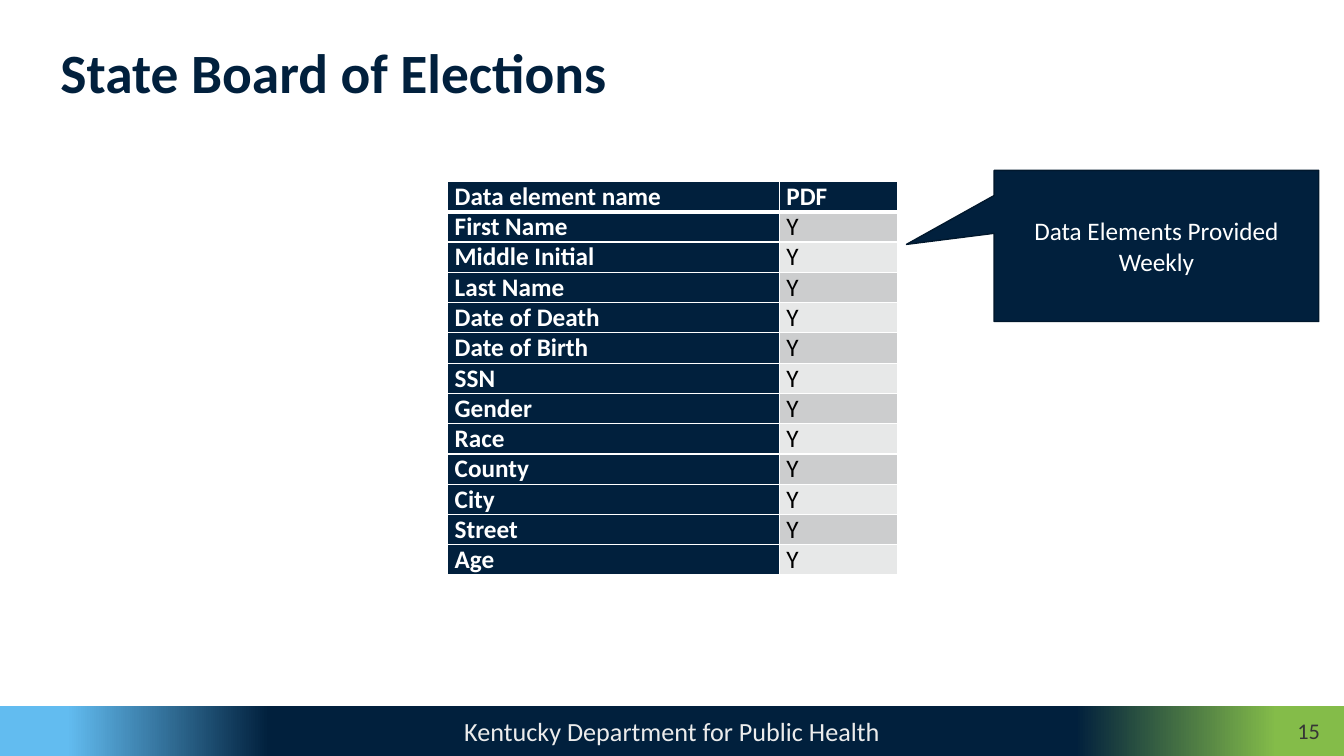
from dataclasses import dataclass

from lxml.etree import SubElement
from pptx import Presentation
from pptx.dml.color import RGBColor
from pptx.enum.shapes import MSO_SHAPE
from pptx.enum.text import MSO_ANCHOR, MSO_AUTO_SIZE, PP_ALIGN
from pptx.oxml.ns import qn
from pptx.util import Inches, Pt


@dataclass(frozen=True)
class Theme:
    font: str = "Calibri"
    navy: str = "01203D"
    outline: str = "01182D"
    sky: str = "62BCF0"
    green: str = "84BC49"
    white: str = "FFFFFF"
    black: str = "000000"
    footer_text: str = "ECECEC"
    number_text: str = "363636"
    bands: tuple = ("CCCDCE", "E7E8E8")
    title_size: float = 39.6
    text_size: float = 18
    footer_size: float = 18.7
    number_size: float = 16
    rule: float = 1
    header_rule: float = 3


def inches(*lengths):
    return [Inches(length) for length in lengths]


class SlideBuilder:
    def __init__(self, slide, theme):
        self.slide = slide
        self.theme = theme

    def fill_text(self, frame, text, size, color, bold=False, align=PP_ALIGN.LEFT,
                  **frame_format):
        formats = {"word_wrap": True, "vertical_anchor": MSO_ANCHOR.MIDDLE}
        for name, value in (formats | frame_format).items():
            setattr(frame, name, value)
        para = frame.paragraphs[0]
        para.alignment = align
        span = para.add_run()
        span.text = text
        font_format = {"name": self.theme.font, "size": Pt(size), "bold": bold}
        for name, value in font_format.items():
            setattr(span.font, name, value)
        span.font.color.rgb = RGBColor.from_string(color)
        return para

    def title(self, text, at):
        title = self.slide.shapes.title
        title.left, title.top, title.width, title.height = inches(*at)
        para = self.fill_text(title.text_frame, text, self.theme.title_size,
                              self.theme.navy, bold=True,
                              vertical_anchor=MSO_ANCHOR.TOP,
                              auto_size=MSO_AUTO_SIZE.NONE)
        para.line_spacing = 0.9

    def text_box(self, text, at, size, color, align):
        box = self.slide.shapes.add_textbox(*inches(*at))
        self.fill_text(box.text_frame, text, size, color, align=align)

    def shape(self, kind, text, at, size, color):
        shape = self.slide.shapes.add_shape(kind, *inches(*at))
        shape.shadow.inherit = False
        self.fill_text(shape.text_frame, text, size, color, align=PP_ALIGN.CENTER)
        return shape

    def footer_bar(self, text, at, stops):
        bar = self.shape(MSO_SHAPE.RECTANGLE, text, at,
                         self.theme.footer_size, self.theme.footer_text)
        bar.line.fill.background()
        bar.fill.gradient()
        bar.fill.gradient_angle = 0
        stop_list = bar.element.spPr.find(".//" + qn("a:gsLst"))
        for stop in list(stop_list):
            stop_list.remove(stop)
        for percent, color in stops:
            stop = SubElement(stop_list, qn("a:gs"), pos=str(percent * 1000))
            SubElement(stop, qn("a:srgbClr"), val=color)

    def callout(self, text, at, tip):
        """Draw a callout whose tip is given as shares of its size from its centre."""
        callout = self.shape(MSO_SHAPE.RECTANGULAR_CALLOUT, text, at,
                             self.theme.text_size, self.theme.white)
        callout.adjustments[0], callout.adjustments[1] = tip
        callout.fill.solid()
        callout.fill.fore_color.rgb = RGBColor.from_string(self.theme.navy)
        callout.line.color.rgb = RGBColor.from_string(self.theme.outline)
        callout.line.width = Pt(self.theme.rule)

    def cell_borders(self, cell, widths):
        properties = cell._tc.get_or_add_tcPr()
        for side, width in widths.items():
            line = SubElement(properties, qn(f"a:ln{side}"), w=str(Pt(width)))
            fill = SubElement(line, qn("a:solidFill"))
            SubElement(fill, qn("a:srgbClr"), val=self.theme.white)

    def table(self, rows, at, column_widths):
        theme = self.theme
        frame = self.slide.shapes.add_table(len(rows), len(column_widths), *inches(*at))
        table = frame.table
        for column, width in zip(table.columns, column_widths):
            column.width = Inches(width)
        for r, row in enumerate(rows):
            for c, text in enumerate(row):
                cell = table.cell(r, c)
                heading = r == 0 or c == 0
                margins = {"margin_left": 0.07, "margin_right": 0.07,
                           "margin_top": 0, "margin_bottom": 0}
                for name, margin in margins.items():
                    setattr(cell, name, Inches(margin))
                self.fill_text(cell.text_frame, text, theme.text_size,
                               theme.white if heading else theme.black, bold=heading)
                cell.vertical_anchor = MSO_ANCHOR.BOTTOM
                self.cell_borders(cell, {
                    "L": theme.rule, "R": theme.rule,
                    "T": theme.header_rule if r == 1 else theme.rule,
                    "B": theme.header_rule if r == 0 else theme.rule})
                cell.fill.solid()
                color = theme.navy if heading else theme.bands[(r - 1) % 2]
                cell.fill.fore_color.rgb = RGBColor.from_string(color)


ELEMENTS = ["First Name", "Middle Initial", "Last Name", "Date of Death",
            "Date of Birth", "SSN", "Gender", "Race", "County", "City",
            "Street", "Age"]


def main():
    theme = Theme()
    deck = Presentation()
    deck.slide_width, deck.slide_height = inches(13.33, 7.5)
    page = SlideBuilder(deck.slides.add_slide(deck.slide_layouts[5]), theme)

    page.footer_bar("Kentucky Department for Public Health", (0, 7, 13.33, 0.5),
                    [(5, theme.sky), (20, theme.navy), (80, theme.navy), (95, theme.green)])
    page.text_box("15", (12.43, 7.11, 0.76, 0.28), theme.number_size,
                  theme.number_text, PP_ALIGN.RIGHT)
    page.title("State Board of Elections", (0.5, 0.4, 12.33, 1.18))
    page.callout("Data Elements Provided Weekly", (9.86, 1.69, 3.22, 1.5),
                 tip=(-0.77, -0.01))
    page.table([("Data element name", "PDF")] + [(name, "Y") for name in ELEMENTS],
               (4.44, 1.8, 4.46, 3.9), (3.29, 1.17))

    deck.save("out.pptx")


if __name__ == "__main__":
    main()
